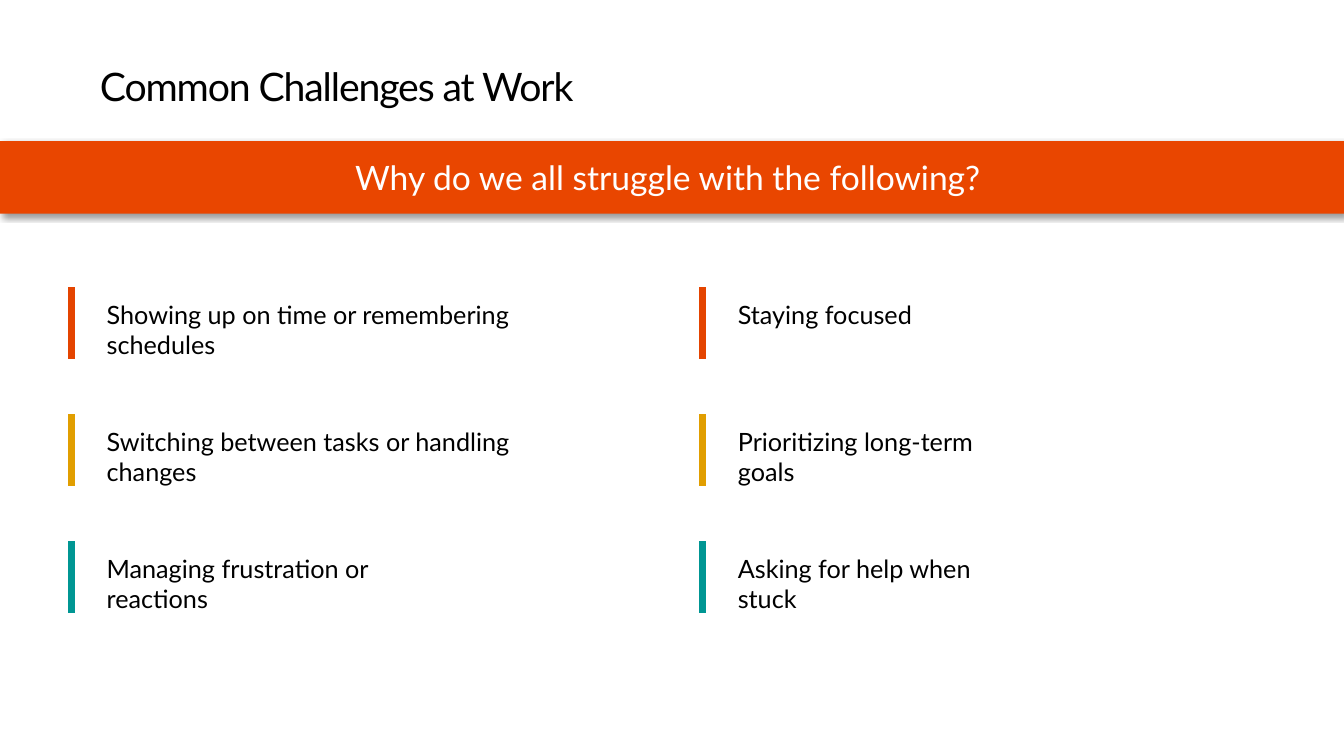
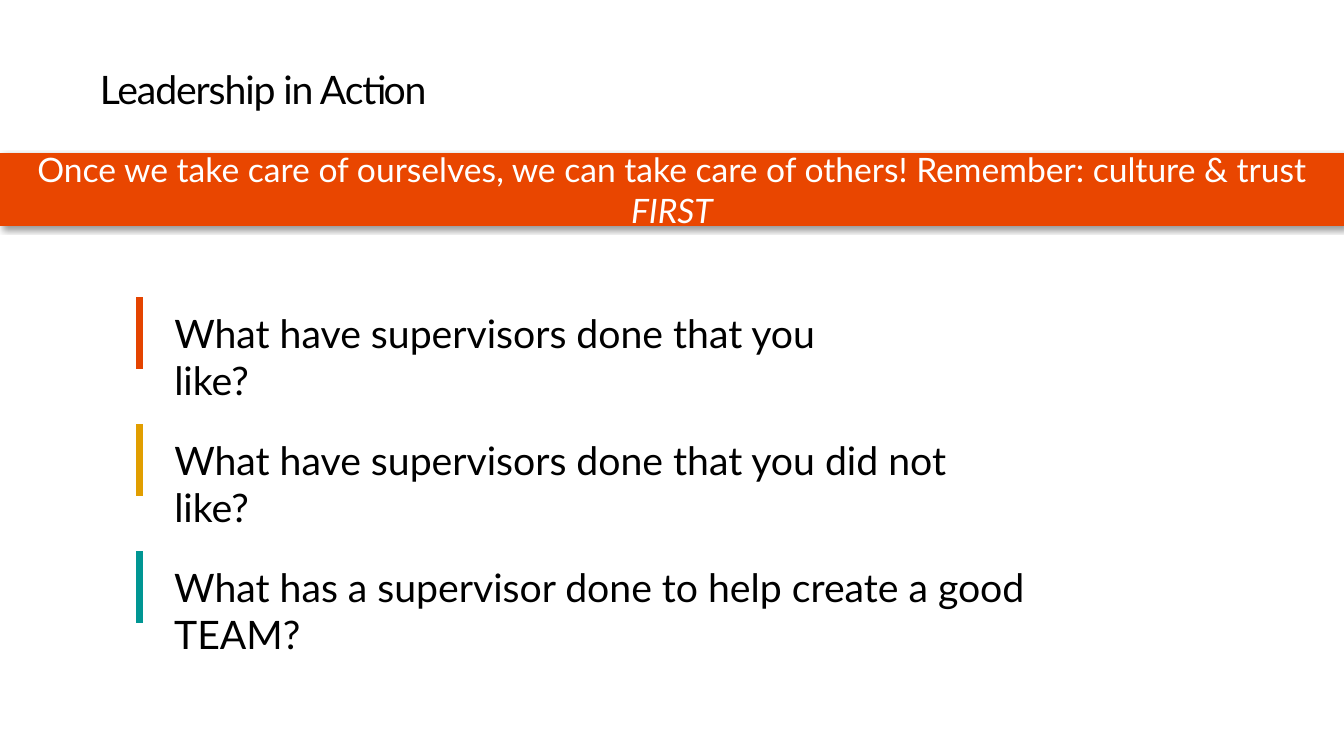
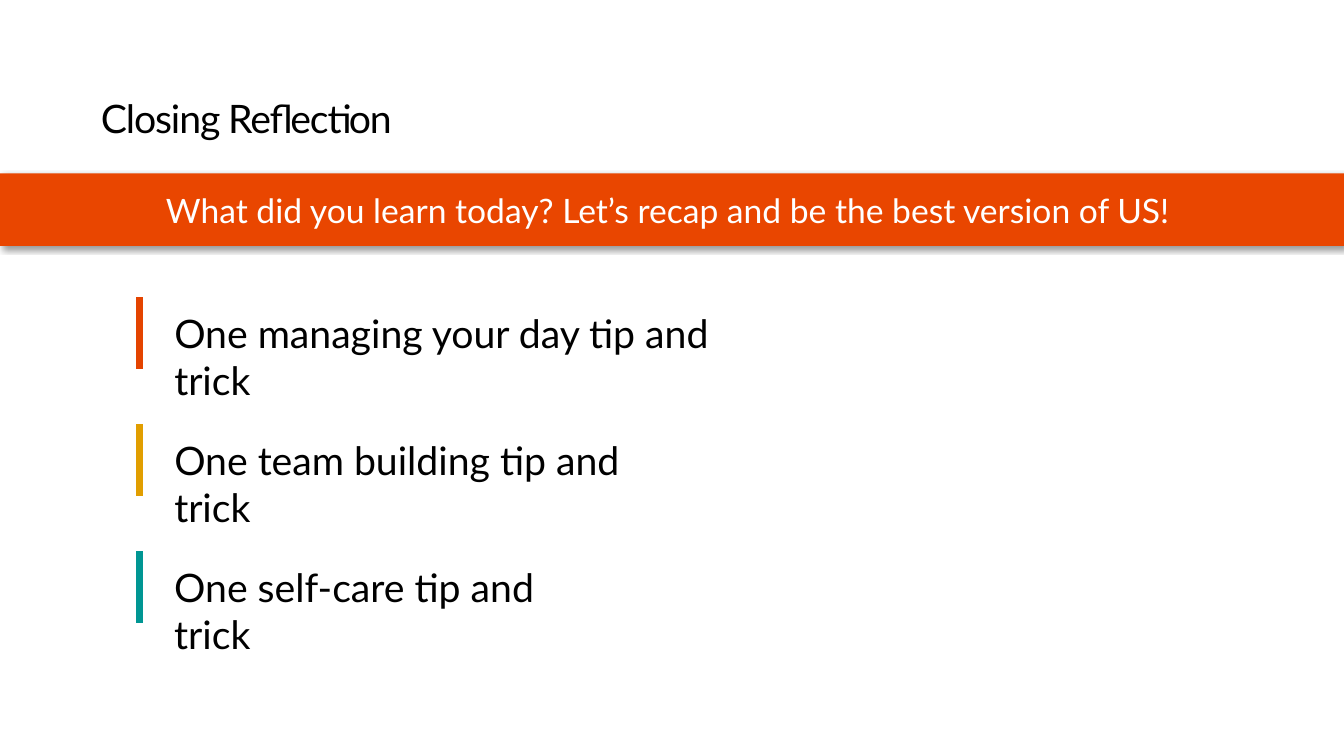
from lxml.etree import SubElement
from pptx import Presentation
from pptx.dml.color import RGBColor
from pptx.enum.shapes import MSO_CONNECTOR, MSO_SHAPE
from pptx.enum.text import MSO_ANCHOR, MSO_AUTO_SIZE, PP_ALIGN
from pptx.oxml.ns import qn
from pptx.util import Inches, Pt

BLACK = RGBColor(0x00, 0x00, 0x00)
WHITE = RGBColor(0xFF, 0xFF, 0xFF)
BANNER_ORANGE = RGBColor(0xE9, 0x46, 0x00)
RED = RGBColor(0xE4, 0x44, 0x00)
GOLD = RGBColor(0xE1, 0x9E, 0x00)
TEAL = RGBColor(0x00, 0x96, 0x93)
MARKERS = (RED, GOLD, TEAL)

PAGE_WIDTH, PAGE_HEIGHT = 13.33, 7.5
ROW_PITCH, MARKER_HEIGHT = 1.26, 0.71
TEXT_INDENT, TEXT_DROP = 0.25, 0.07

TITLE_FRAME = {"margin_left": 0, "margin_top": Inches(0.05),
               "margin_right": 0, "margin_bottom": 0,
               "vertical_anchor": MSO_ANCHOR.BOTTOM, "word_wrap": True,
               "auto_size": MSO_AUTO_SIZE.NONE}

# Each list: left, top, text size, then (text, box width) per row
PAGES = [
    {"title": "Common Challenges at Work", "title_at": (0.99, 0.44),
     "banner_top": 1.4,
     "banner": [("Why do we all struggle with the following? ", False)],
     "lists": [
         (0.71, 2.85, 18, [
             ("Showing up on time or remembering schedules", 5.16),
             ("Switching between tasks or handling changes", 5.03),
             ("Managing frustration or reactions", 3.73)]),
         (6.97, 2.85, 18, [
             ("Staying focused", 3.06),
             ("Prioritizing long-term goals", 3.06),
             ("Asking for help when stuck", 3.06)])]},
    {"title": "Leadership in Action", "title_at": (0.99, 0.47),
     "banner_top": 1.52,
     "banner": [("Once we take care of ourselves, we can take care of others! "
                 "Remember: culture & trust ", False), ("FIRST", True)],
     "lists": [
         (1.38, 2.95, 28, [
             ("What have supervisors done that you like?", 7.08),
             ("What have supervisors done that you did not like?", 8.38),
             ("What has a supervisor done to help create a good TEAM?", 9.5)])]},
    {"title": "Closing Reflection", "title_at": (1, 0.76),
     "banner_top": 1.72,
     "banner": [("What did you learn today? Let’s recap and be the best "
                 "version of US! ", False)],
     "lists": [
         (1.38, 2.95, 28, [
             ("One managing your day tip and trick", 6.08),
             ("One team building tip and trick", 5.32),
             ("One self-care tip and trick", 4.44)])]},
]


def apply(target, values):
    for name, value in values.items():
        setattr(target, name, value)


def add_span(para, text, size, color, italic=None):
    span = para.add_run()
    span.text = text
    apply(span.font, {"name": "Lato", "size": Pt(size), "italic": italic})
    span.font.color.rgb = color
    return span


def add_title(page, left, top, text):
    title = page.shapes.title
    apply(title, {"left": Inches(left), "top": Inches(top),
                  "width": Inches(11.33), "height": Inches(0.65)})
    apply(title.text_frame, TITLE_FRAME)
    para = title.text_frame.paragraphs[0]
    apply(para, {"alignment": PP_ALIGN.LEFT, "line_spacing": 0.9})
    span = add_span(para, text, 28, BLACK)
    span.font._element.set("spc", "-80")


def add_shadow(shape):
    shape.shadow.inherit = False
    effects = shape._element.spPr.find(qn("a:effectLst"))
    shadow = SubElement(effects, qn("a:outerShdw"), blurRad=str(Pt(4)),
                        dist=str(Pt(3)), dir="2700000", algn="tl",
                        rotWithShape="0")
    color = SubElement(shadow, qn("a:srgbClr"), val=str(BLACK))
    SubElement(color, qn("a:alpha"), val="40000")


def add_banner(page, top, spans):
    banner = page.shapes.add_shape(MSO_SHAPE.RECTANGLE, 0, Inches(top),
                                   Inches(PAGE_WIDTH), Inches(0.72))
    banner.fill.solid()
    banner.fill.fore_color.rgb = BANNER_ORANGE
    banner.line.fill.background()
    add_shadow(banner)
    apply(banner.text_frame, {"word_wrap": True,
                              "vertical_anchor": MSO_ANCHOR.MIDDLE})
    para = banner.text_frame.paragraphs[0]
    para.alignment = PP_ALIGN.CENTER
    for text, italic in spans:
        add_span(para, text, 24, WHITE, italic)


def add_row(page, left, top, width, size, text, color):
    row = page.shapes.add_group_shape()
    # Text beside the marker
    box = row.shapes.add_textbox(Inches(left + TEXT_INDENT),
                                 Inches(top + TEXT_DROP), Inches(width),
                                 Inches(0.4 if size < 28 else 0.57))
    apply(box.text_frame, {"word_wrap": True,
                           "auto_size": MSO_AUTO_SIZE.SHAPE_TO_FIT_TEXT})
    add_span(box.text_frame.paragraphs[0], text, size, BLACK)
    # Coloured marker
    marker = row.shapes.add_connector(
        MSO_CONNECTOR.STRAIGHT, Inches(left), Inches(top),
        Inches(left), Inches(top + MARKER_HEIGHT))
    marker.line.color.rgb = color
    marker.line.width = Pt(5)
    SubElement(marker._element.spPr, qn("a:effectLst"))


def add_list(page, left, top, size, rows):
    for index, ((text, width), color) in enumerate(zip(rows, MARKERS)):
        add_row(page, left, top + index * ROW_PITCH, width, size, text, color)


def add_page(deck, content):
    page = deck.slides.add_slide(deck.slide_layouts[5])
    add_title(page, *content["title_at"], content["title"])
    add_banner(page, content["banner_top"], content["banner"])
    for items in content["lists"]:
        add_list(page, *items)


def main():
    deck = Presentation()
    apply(deck, {"slide_width": Inches(PAGE_WIDTH),
                 "slide_height": Inches(PAGE_HEIGHT)})
    for content in PAGES:
        add_page(deck, content)
    deck.save("out.pptx")


if __name__ == "__main__":
    main()
